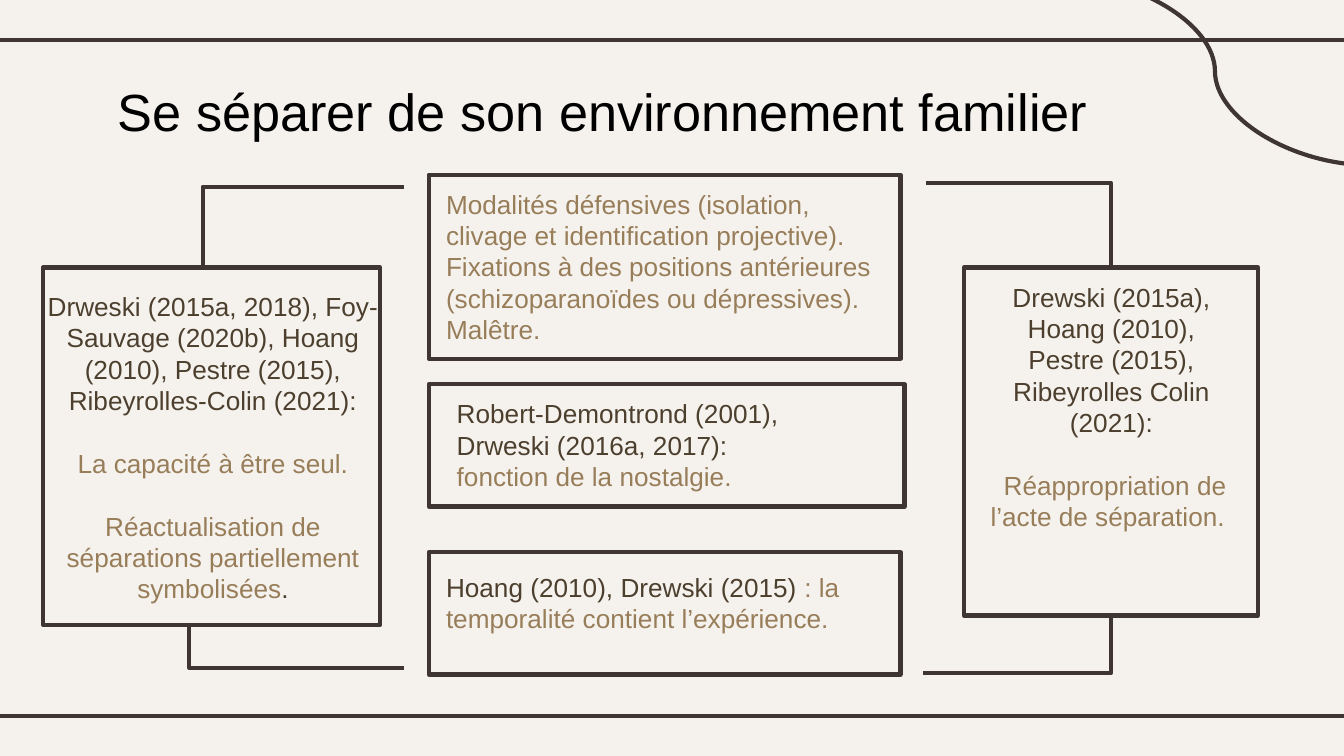
from lxml import etree
from pptx import Presentation
from pptx.dml.color import RGBColor
from pptx.enum.shapes import MSO_CONNECTOR, MSO_SHAPE
from pptx.enum.text import MSO_ANCHOR, PP_ALIGN
from pptx.oxml.ns import qn
from pptx.util import Inches, Pt

STRAIGHT, ELBOW, CURVE = MSO_CONNECTOR.STRAIGHT, MSO_CONNECTOR.ELBOW, MSO_CONNECTOR.CURVE
RECTANGLE = MSO_SHAPE.RECTANGLE
TOP = MSO_ANCHOR.TOP
LEFT, CENTER = PP_ALIGN.LEFT, PP_ALIGN.CENTER
TOP_SIDE, BOTTOM_SIDE = 0, 2

FONT = "Arial"
COLORS = {
    "background": "F5F2EE",
    "line": "3F3533",
    "title": "000000",
    "authors": "4C3F2D",
    "idea": "987D59",
}
LINE_WIDTH = Pt(2.25)
BLANK_LINE = Pt(16.8)


def color(name):
    return RGBColor.from_string(COLORS[name])


def style_line(line):
    line.color.rgb = color("line")
    line.width = LINE_WIDTH


def add_line(page, kind, start, end):
    line = page.shapes.add_connector(kind, *map(Inches, start + end))
    style_line(line.line)
    etree.SubElement(line._element.spPr, qn("a:effectLst"))
    return line


def add_bracket(page, start, end):
    """Single-corner elbow: horizontal from start, then vertical to end."""
    bracket = add_line(page, ELBOW, start, end)
    bracket._element.spPr.find(qn("a:prstGeom")).set("prst", "bentConnector2")
    return bracket


def add_frame(page, left, top, width, height):
    frame = page.shapes.add_shape(RECTANGLE, *map(Inches, (left, top, width, height)))
    frame.shadow.inherit = False
    frame.fill.background()
    style_line(frame.line)
    return frame


def add_text(page, place, paragraphs, size=14, align=LEFT):
    """Each paragraph is (space before, [(wording, colour name), ...])."""
    box = page.shapes.add_textbox(*map(Inches, place))
    text = box.text_frame
    text.word_wrap = True
    text.vertical_anchor = TOP
    text.margin_left = text.margin_right = Inches(0.1)
    text.margin_top = text.margin_bottom = Inches(0.1)
    for index, (gap, spans) in enumerate(paragraphs):
        para = text.add_paragraph() if index else text.paragraphs[0]
        para.alignment = align
        para.line_spacing = 1.0
        para.space_before = gap
        for wording, color_name in spans:
            span = para.add_run()
            span.text = wording
            span.font.name = FONT
            span.font.size = Pt(size)
            span.font.color.rgb = color(color_name)


def add_decoration(page):
    for y in (0.3, 5.33):
        add_line(page, STRAIGHT, (-0.08, y), (10.08, y))
    add_line(page, CURVE, (7.88, -0.17), (10.2, 1.23))


def add_left_column(page):
    add_frame(page, 0.32, 1.99, 2.51, 2.66)
    add_text(page, (0.25, 2.06, 2.67, 2.59), [
        (0, [("Drweski (2015a, 2018), Foy-Sauvage (2020b), Hoang (2010), "
              "Pestre (2015), Ribeyrolles-Colin (2021):", "authors")]),
        (BLANK_LINE, [("La capacité à être seul.", "idea")]),
        (BLANK_LINE, [("Réactualisation de séparations partiellement symbolisées", "idea"),
                      (".", "authors")]),
    ], align=CENTER)
    add_bracket(page, (3.01, 1.39), (1.51, 1.99))
    add_bracket(page, (3.01, 4.97), (1.41, 4.65))


def add_middle_column(page):
    for top, width, height in ((1.3, 3.51, 1.37), (2.86, 3.54, 0.91), (4.11, 3.51, 0.91)):
        add_frame(page, 3.19, top, width, height)
    add_text(page, (3.22, 1.3, 3.51, 1.37), [
        (0, [("Modalités défensives (isolation, clivage et identification projective).",
              "idea")]),
        (0, [("Fixations à des positions antérieures (schizoparanoïdes ou dépressives). "
              "Malêtre.", "idea")]),
    ])
    add_text(page, (3.3, 2.86, 3.24, 0.9), [
        (0, [("Robert-Demontrond (2001), Drweski (2016a, 2017):", "authors")]),
        (0, [("fonction de la nostalgie.", "idea")]),
    ])
    add_text(page, (3.22, 4.15, 3.38, 0.78), [
        (0, [("Hoang (2010), Drewski (2015) ", "authors"),
             (": la temporalité contient l’expérience.", "idea")]),
    ])


def add_right_column(page):
    frame = add_frame(page, 7.17, 1.99, 2.19, 2.59)
    add_text(page, (7.24, 1.99, 2.06, 2.59), [
        (0, [("Drewski (2015a), Hoang (2010), Pestre (2015), Ribeyrolles Colin (2021):",
              "authors")]),
        (BLANK_LINE, [(" ", "authors"),
                      ("Réappropriation de l’acte de séparation. ", "idea")]),
    ], align=CENTER)
    add_bracket(page, (6.89, 1.36), (8.27, 1.99)).end_connect(frame, TOP_SIDE)
    add_bracket(page, (6.87, 5.01), (8.27, 4.58)).end_connect(frame, BOTTOM_SIDE)


def main():
    deck = Presentation()
    # Widescreen 16:9
    deck.slide_width = Inches(10)
    deck.slide_height = Inches(10 * 9 / 16)
    page = deck.slides.add_slide(deck.slide_layouts[6])
    page.background.fill.solid()
    page.background.fill.fore_color.rgb = color("background")

    # Border lines and corner curve
    add_decoration(page)

    # Title
    add_text(page, (0.78, 0.49, 8.44, 0.63),
             [(0, [("Se séparer de son environnement familier", "title")])], size=28)

    # Three columns of the diagram
    add_left_column(page)
    add_middle_column(page)
    add_right_column(page)

    deck.save("out.pptx")


if __name__ == "__main__":
    main()
